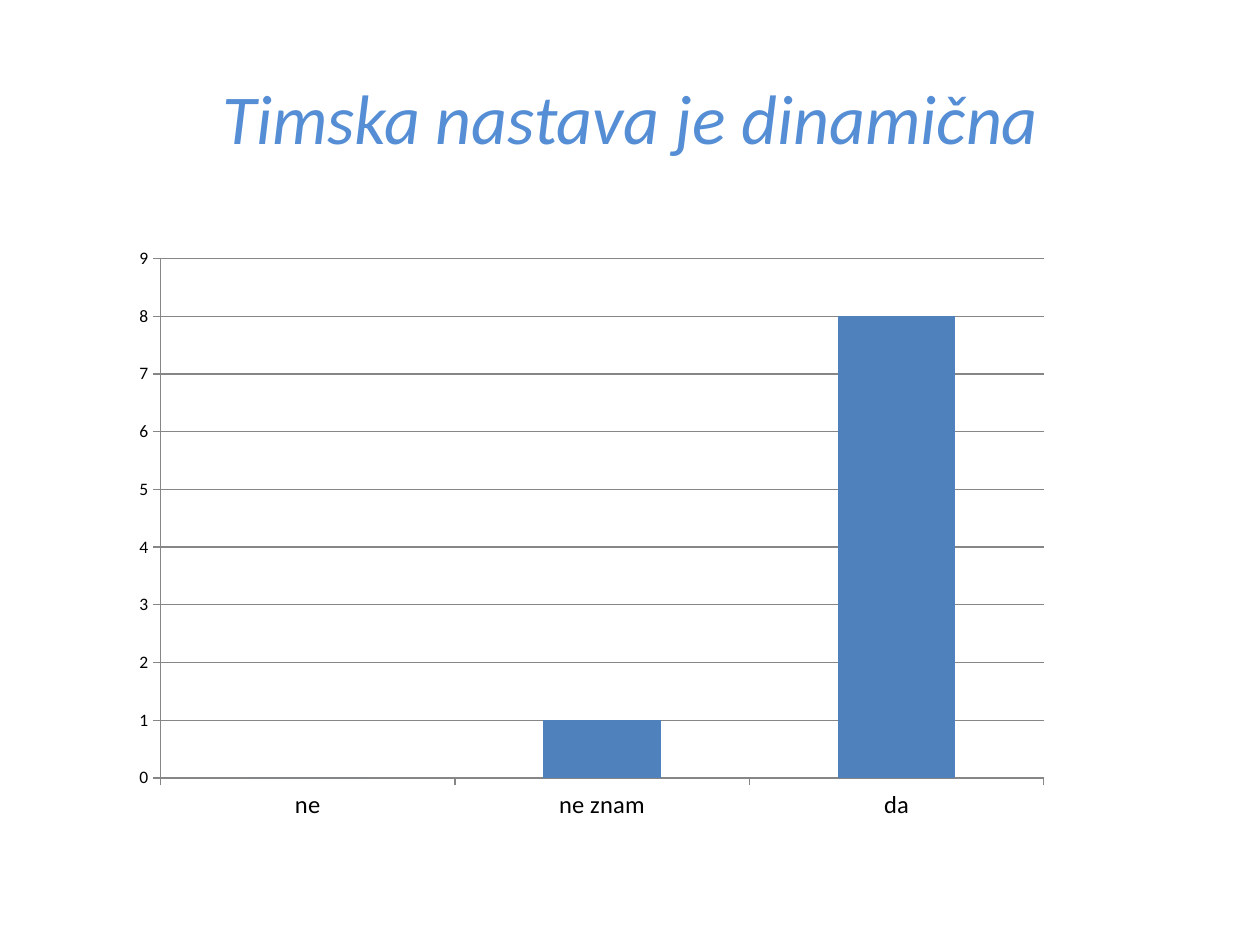
from dataclasses import dataclass

from lxml.etree import SubElement
from pptx import Presentation
from pptx.chart.data import CategoryChartData
from pptx.dml.color import RGBColor
from pptx.enum.chart import XL_CHART_TYPE, XL_TICK_MARK
from pptx.enum.text import MSO_ANCHOR, PP_ALIGN
from pptx.oxml.ns import qn
from pptx.util import Emu, Pt

EMU_PER_PX = 9144  # 100 px to the inch


def px(length):
    return Emu(length * EMU_PER_PX)


@dataclass(frozen=True)
class Theme:
    font: str = "Calibri"
    title_color: RGBColor = RGBColor(0x55, 0x8E, 0xD5)
    text_color: RGBColor = RGBColor(0, 0, 0)
    bar_color: RGBColor = RGBColor(0x4F, 0x81, 0xBD)
    line_color: RGBColor = RGBColor(0x86, 0x86, 0x86)
    title_size: Pt = Pt(40)
    category_size: Pt = Pt(14)
    value_size: Pt = Pt(10)
    line_width: Pt = Pt(0.75)


def apply_format(target, values):
    for name, value in values.items():
        setattr(target, name, value)


class SlideBuilder:
    def __init__(self, page, theme):
        self.page = page
        self.theme = theme

    def style_font(self, font, size, color, italic=False):
        apply_format(font, {"name": self.theme.font, "size": size, "italic": italic})
        font.color.rgb = color

    def style_line(self, line):
        line.color.rgb = self.theme.line_color
        line.width = self.theme.line_width

    def title(self, text, left, top, width, height):
        box = self.page.shapes.add_textbox(*map(px, (left, top, width, height)))
        apply_format(box.text_frame, {
            "word_wrap": True,
            "vertical_anchor": MSO_ANCHOR.MIDDLE,
        })
        para = box.text_frame.paragraphs[0]
        para.alignment = PP_ALIGN.CENTER
        span = para.add_run()
        span.text = text
        self.style_font(span.font, self.theme.title_size, self.theme.title_color, True)

    def column_chart(self, answers, plot_area, left, top, width, height):
        data = CategoryChartData()
        data.categories = list(answers)
        data.add_series("Series 1", list(answers.values()))
        frame = self.page.shapes.add_chart(
            XL_CHART_TYPE.COLUMN_CLUSTERED, *map(px, (left, top, width, height)), data)
        chart = frame.chart
        apply_format(chart, {"has_legend": False, "has_title": False})
        self.style_font(chart.font, self.theme.value_size, self.theme.text_color)

        # Columns
        plot = chart.plots[0]
        apply_format(plot, {"gap_width": 150, "vary_by_categories": False})
        fill = plot.series[0].format.fill
        fill.solid()
        fill.fore_color.rgb = self.theme.bar_color

        # Axes and gridlines
        apply_format(chart.value_axis, {
            "minimum_scale": 0, "maximum_scale": 9, "major_unit": 1,
            "has_major_gridlines": True,
        })
        self.style_line(chart.value_axis.major_gridlines.format.line)
        sizes = {
            chart.category_axis: self.theme.category_size,
            chart.value_axis: self.theme.value_size,
        }
        for axis, size in sizes.items():
            axis.major_tick_mark = XL_TICK_MARK.OUTSIDE
            self.style_line(axis.format.line)
            self.style_font(axis.tick_labels.font, size, self.theme.text_color)

        self.place_plot(chart, plot_area)

    def place_plot(self, chart, plot_area):
        """Fix the inner plot area as fractions of the chart."""
        area = chart.plots[0]._element.getparent()
        layout = area.find(qn("c:layout"))
        if layout is None:
            layout = area.makeelement(qn("c:layout"))
            area.insert(0, layout)
        manual = SubElement(layout, qn("c:manualLayout"))
        settings = {"layoutTarget": "inner", "xMode": "edge", "yMode": "edge"}
        settings.update(zip("xywh", plot_area))
        for name, value in settings.items():
            SubElement(manual, qn(f"c:{name}")).set("val", str(value))


def main():
    deck = Presentation()
    deck.slide_width, deck.slide_height = px(1000), px(750)
    page = deck.slides.add_slide(deck.slide_layouts[6])
    builder = SlideBuilder(page, Theme())

    # Heading
    builder.title("Timska nastava je dinamična", 50, 30, 900, 125)

    # Survey answers
    builder.column_chart({"ne": 0, "ne znam": 1, "da": 8},
                         (0.086, 0.061, 0.779, 0.833), 50, 175, 900, 495)

    deck.save("out.pptx")


if __name__ == "__main__":
    main()
